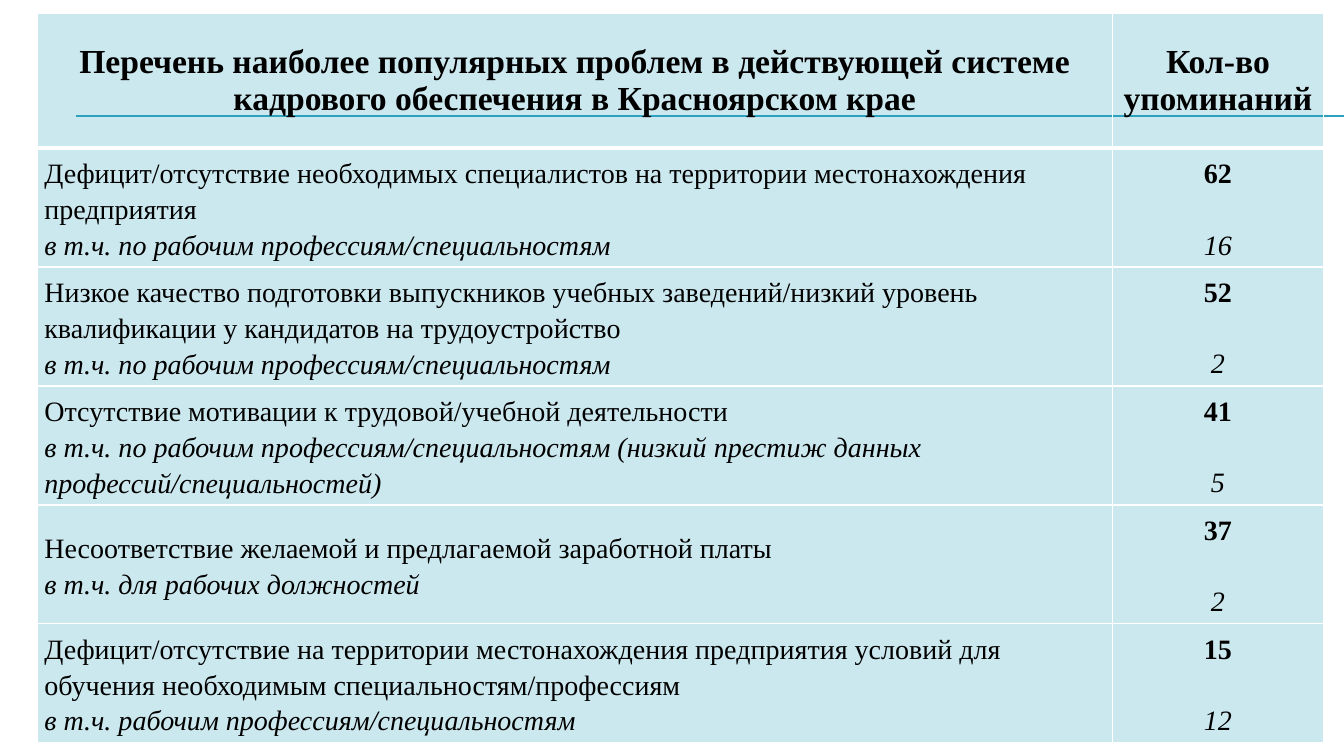
"""Build a slide with a table of staffing problems and how often they were named."""
from lxml import etree
from pptx import Presentation
from pptx.dml.color import RGBColor
from pptx.enum.shapes import MSO_CONNECTOR
from pptx.enum.text import MSO_ANCHOR, PP_ALIGN
from pptx.oxml import parse_xml
from pptx.oxml.ns import qn
from pptx.util import Inches, Pt

LINE = MSO_CONNECTOR.STRAIGHT
MIDDLE = MSO_ANCHOR.MIDDLE
LEFT, CENTER = PP_ALIGN.LEFT, PP_ALIGN.CENTER
NS = "http://schemas.openxmlformats.org/drawingml/2006/main"
TEAL, WHITE, BLACK = "2DA2BF", "FFFFFF", "000000"

HEADS = [
    "Перечень наиболее популярных проблем в действующей системе кадрового обеспечения в Красноярском крае",
    "Кол-во упоминаний",
]
TRADES = "в т.ч. по рабочим профессиям/специальностям"
ROWS = [
    ("Дефицит/отсутствие необходимых специалистов на территории местонахождения предприятия",
     TRADES, "62", "16"),
    ("Низкое качество подготовки выпускников учебных заведений/низкий уровень "
     "квалификации у кандидатов на трудоустройство",
     TRADES, "52", "2"),
    ("Отсутствие мотивации к трудовой/учебной деятельности",
     TRADES + " (низкий престиж данных профессий/специальностей)", "41", "5"),
    ("Несоответствие желаемой и предлагаемой заработной платы",
     "в т.ч. для рабочих должностей", "37", "2"),
    ("Дефицит/отсутствие на территории местонахождения предприятия условий для "
     "обучения необходимым специальностям/профессиям",
     "в т.ч. рабочим профессиям/специальностям", "15", "12"),
]


def color(code):
    return RGBColor.from_string(code)


def style(cell, row):
    cell.vertical_anchor = MIDDLE
    cell.fill.solid()
    cell.fill.fore_color.rgb = color(TEAL)
    props = cell._tc.get_or_add_tcPr()
    tint = props.find(".//" + qn("a:srgbClr"))
    etree.SubElement(tint, qn("a:alpha"), val="24000")
    wide = {0: "B", 1: "T"}.get(row)
    for pos, side in enumerate("LRTB"):
        width = Pt(3 if side == wide else 1)
        props.insert(pos, parse_xml(
            f'<a:ln{side} xmlns:a="{NS}" w="{width}"><a:solidFill>'
            f'<a:srgbClr val="{WHITE}"/></a:solidFill></a:ln{side}>'))


deck = Presentation()
deck.slide_width, deck.slide_height = Inches(13.33), Inches(7.5)
slide = deck.slides.add_slide(deck.slide_layouts[6])

for y in (1.15, 1.16):
    rule = slide.shapes.add_connector(LINE, Inches(0.75), Inches(y), Inches(13.33), Inches(y))
    rule.line.color.rgb = color(TEAL)
    rule.line.width = Pt(0.75)
    etree.SubElement(rule._element.spPr, qn("a:effectLst"))

frame = slide.shapes.add_table(len(ROWS) + 1, 2, Inches(0.37), Inches(0.13),
                               Inches(12.76), Inches(7.24))
table = frame.table
table.columns[0].width, table.columns[1].width = Inches(10.66), Inches(2.1)
for row in table.rows:
    row.height = Inches(1.18)
table.rows[0].height = Inches(1.34)

for col, head in enumerate(HEADS):
    cell = table.cell(0, col)
    style(cell, 0)
    para = cell.text_frame.paragraphs[0]
    para.text = head
    para.alignment = CENTER
    font = para.font
    font.name, font.size, font.bold = "Times New Roman", Pt(24), True
    font.color.rgb = color(BLACK)

for num, (issue, part, count, share) in enumerate(ROWS, 1):
    for col, texts in enumerate([(issue, part), (count, share)]):
        cell = table.cell(num, col)
        style(cell, num)
        cell.margin_left = cell.margin_right = Inches(0.07)
        cell.margin_top = cell.margin_bottom = 0
        cell.text_frame.text = "\n".join(texts)
        for line, para in enumerate(cell.text_frame.paragraphs):
            para.alignment = CENTER if col else LEFT
            para.line_spacing = 1.15
            if col and line:
                para.space_before = Pt(25.3)
            font = para.font
            font.name, font.size = "Times New Roman", Pt(20)
            font.bold = col == 1 and line == 0
            font.italic = line == 1
            font.color.rgb = color(BLACK)

deck.save("out.pptx")
